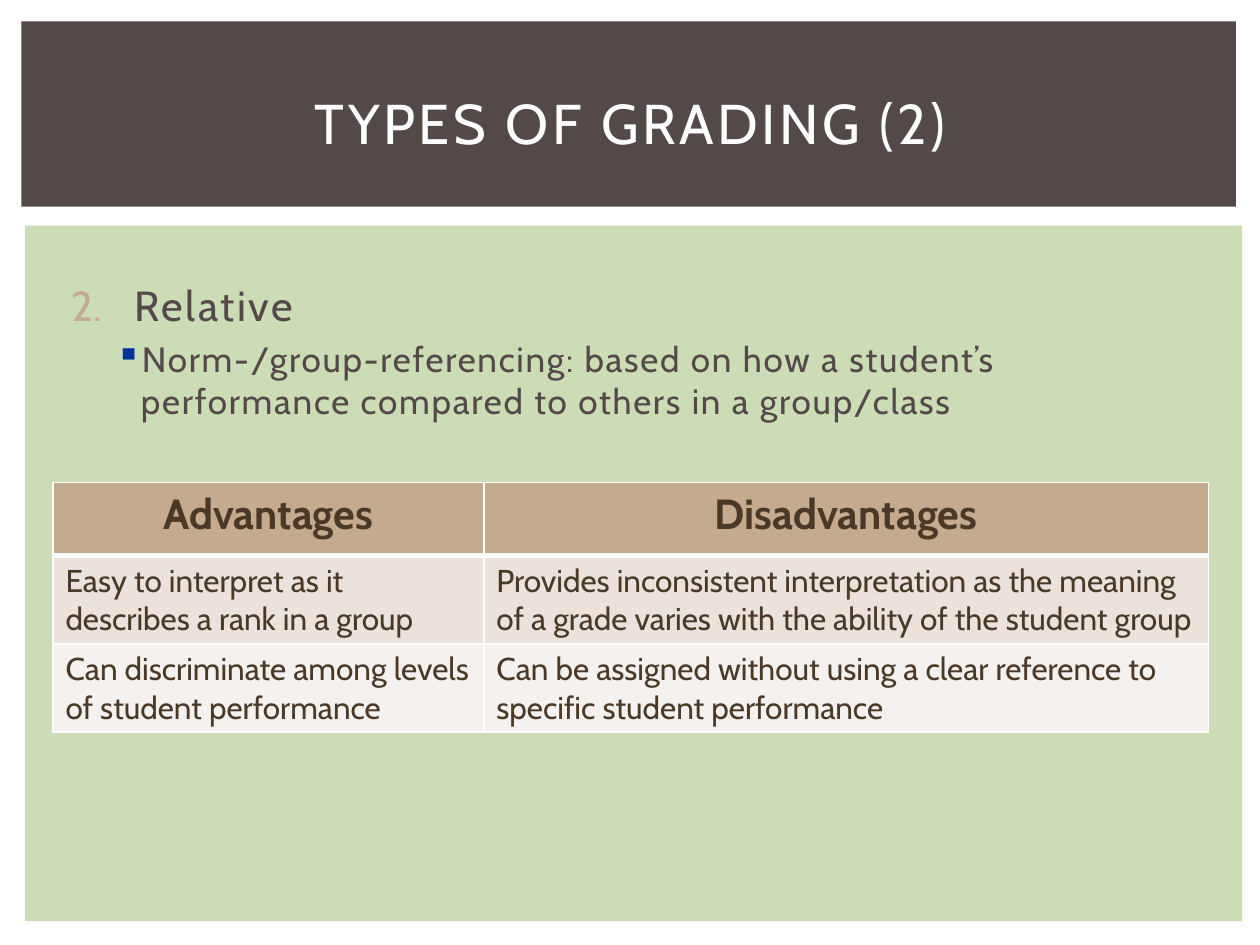
from lxml import etree
from pptx import Presentation
from pptx.dml.color import RGBColor
from pptx.enum.shapes import MSO_SHAPE
from pptx.enum.text import MSO_ANCHOR, PP_ALIGN
from pptx.oxml.ns import qn
from pptx.util import Inches, Pt

RECT = MSO_SHAPE.RECTANGLE
MIDDLE = MSO_ANCHOR.MIDDLE
LEFT, CENTER = PP_ALIGN.LEFT, PP_ALIGN.CENTER

WHITE = RGBColor(0xFF, 0xFF, 0xFF)
DARK = RGBColor(0x53, 0x49, 0x49)
GREEN = RGBColor(0xCB, 0xDC, 0xB6)
TAN = RGBColor(0xC4, 0xAB, 0x8F)
BLUE = RGBColor(0x00, 0x33, 0x99)
BROWN = RGBColor(0x4A, 0x39, 0x27)
BANDS = [TAN, RGBColor(0xEA, 0xE2, 0xDB), RGBColor(0xF5, 0xF1, 0xEE)]
FONT = "Cabin"

# Content
TITLE = "TYPES OF GRADING (2)"
PANELS = [((0.2, 1.79, 9.66, 5.52), GREEN), ((0.17, 0.17, 9.64, 1.47), DARK)]
# text, size, letter gap, left margin, indent, level, bullet colour, bullet
POINTS = [
    ("Relative", 24, 1.5, 0.55, -0.5, 0, TAN,
     ("a:buAutoNum", {"type": "arabicPeriod", "startAt": "2"})),
    ("Norm-/group-referencing: based on how a student’s performance "
     "compared to others in a group/class", 20, 1, 0.6, -0.2, 1, BLUE,
     ("a:buChar", {"char": "▪"})),
]
ROWS = [
    ("Advantages", "Disadvantages"),
    ("Easy to interpret as it describes a rank in a group",
     "Provides inconsistent interpretation as the meaning of a grade "
     "varies with the ability of the student group"),
    ("Can discriminate among levels of student performance",
     "Can be assigned without using a clear reference to specific "
     "student performance"),
]
WIDTHS = [3.42, 5.75]
HEIGHTS = [0.58, 0.68, 0.68]


def add_run(para, text, size, color, gap=0, bold=False):
    run = para.add_run()
    run.text = text
    font = run.font
    font.name, font.size, font.bold = FONT, Pt(size), bold
    font.color.rgb = color
    if gap:
        run._r.get_or_add_rPr().set("spc", str(int(gap * 100)))


def add_box(slide, *place):
    frame = slide.shapes.add_textbox(*map(Inches, place)).text_frame
    frame.word_wrap = True
    return frame


def set_bullet(para, margin, indent, color, bullet):
    props = para._p.get_or_add_pPr()
    props.set("marL", str(Inches(margin)))
    props.set("indent", str(Inches(indent)))
    tint = etree.SubElement(props, qn("a:buClr"))
    etree.SubElement(tint, qn("a:srgbClr"), val=str(color))
    tag, attrs = bullet
    etree.SubElement(props, qn(tag), attrs)


def set_edge(cell, side, width):
    line = etree.SubElement(cell._tc.get_or_add_tcPr(), qn("a:ln" + side),
                            w=str(Pt(width)))
    fill = etree.SubElement(line, qn("a:solidFill"))
    etree.SubElement(fill, qn("a:srgbClr"), val=str(WHITE))


prs = Presentation()
prs.slide_width, prs.slide_height = Inches(10), Inches(7.5)
slide = prs.slides.add_slide(prs.slide_layouts[6])

# Green body panel and dark title band
for place, color in PANELS:
    panel = slide.shapes.add_shape(RECT, *map(Inches, place))
    panel.shadow.inherit = False
    panel.fill.solid()
    panel.fill.fore_color.rgb = color
    panel.line.fill.background()

# Numbered point and its detail
body = add_box(slide, 0.42, 2.17, 9.19, 4.82)
for i, (text, size, gap, margin, indent, level, color, bullet) in enumerate(POINTS):
    para = body.add_paragraph() if i else body.paragraphs[0]
    para.level = level
    set_bullet(para, margin, indent, color, bullet)
    if i:
        para.space_before = Pt(0.2 * size)
    add_run(para, text, size, DARK, gap)

# Title
head = add_box(slide, 0.42, 0.39, 9.17, 1.15)
head.vertical_anchor = MIDDLE
head.paragraphs[0].alignment = CENTER
add_run(head.paragraphs[0], TITLE, 32, WHITE, 2)

# Comparison table
table = slide.shapes.add_table(
    len(ROWS), len(WIDTHS), Inches(0.42), Inches(3.83),
    Inches(sum(WIDTHS)), Inches(sum(HEIGHTS))).table
for col, width in zip(table.columns, WIDTHS):
    col.width = Inches(width)
for r, (row, height) in enumerate(zip(ROWS, HEIGHTS)):
    table.rows[r].height = Inches(height)
    top = r == 0
    for c, text in enumerate(row):
        cell = table.cell(r, c)
        for side in "LRTB":
            thick = (top and side == "B") or (r == 1 and side == "T")
            set_edge(cell, side, 3 if thick else 1)
        cell.fill.solid()
        cell.fill.fore_color.rgb = BANDS[r]
        para = cell.text_frame.paragraphs[0]
        para.alignment = CENTER if top else LEFT
        add_run(para, text, 24 if top else 18, BROWN, bold=top)

prs.save("out.pptx")
